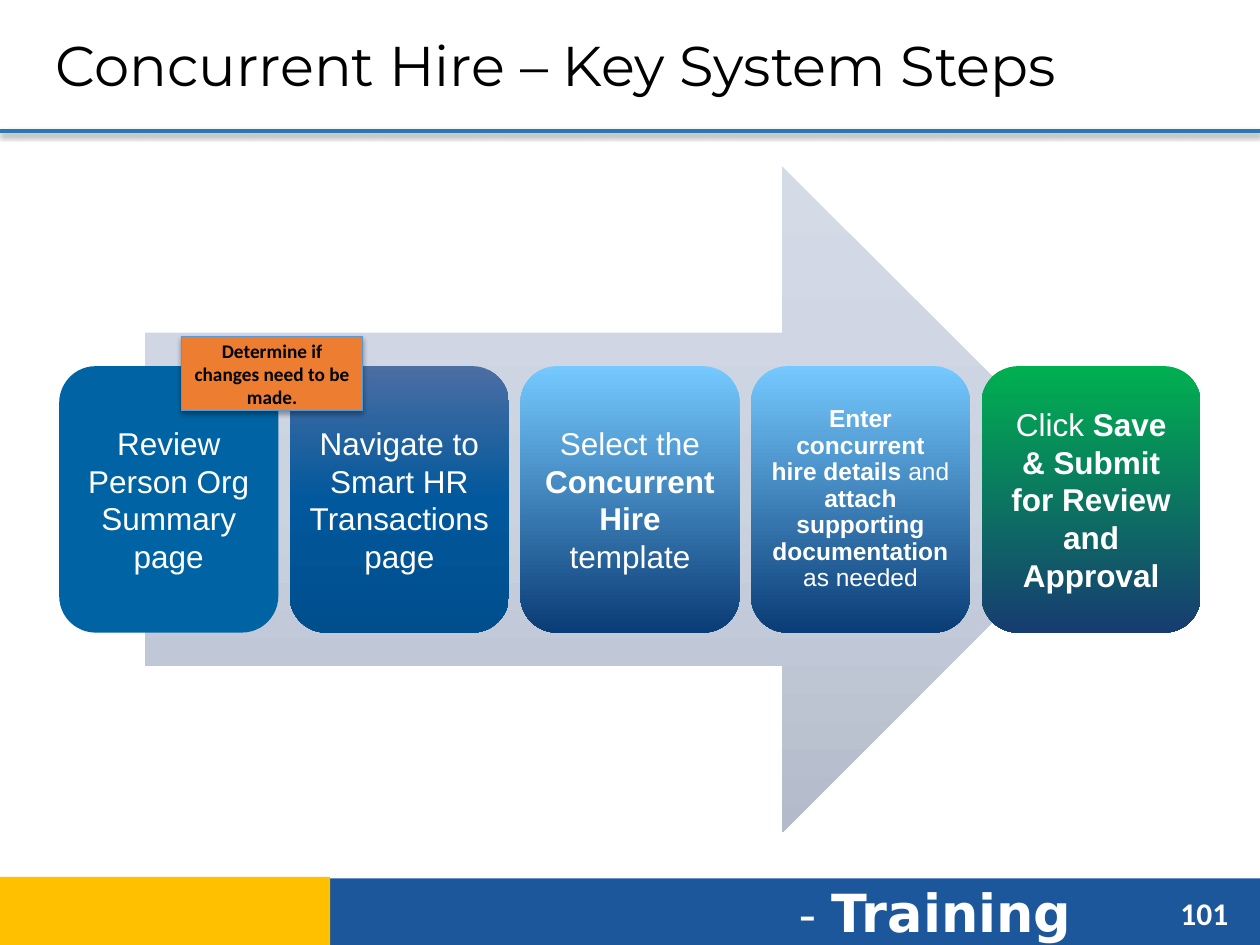
from pptx import Presentation
from pptx.dml.color import RGBColor
from pptx.enum.shapes import MSO_CONNECTOR, MSO_SHAPE
from pptx.enum.text import MSO_ANCHOR, PP_ALIGN
from pptx.oxml import parse_xml
from pptx.oxml.ns import nsdecls
from pptx.util import Inches, Pt

RECT, ROUNDED, ARROW = MSO_SHAPE.RECTANGLE, MSO_SHAPE.ROUNDED_RECTANGLE, MSO_SHAPE.RIGHT_ARROW
STRAIGHT = MSO_CONNECTOR.STRAIGHT
MIDDLE, TOP = MSO_ANCHOR.MIDDLE, MSO_ANCHOR.TOP
CENTER, LEFT = PP_ALIGN.CENTER, PP_ALIGN.LEFT

COLORS = {
    "white": "FFFFFF", "black": "000000", "rule": "2E75B6",
    "footer": "1D579B", "gold": "FFC000",
    "note": "ED7D31", "note_edge": "5698D3",
}
# Gradients run top to bottom as (percent, colour) stops
ARROW_FILL = [(0, "D4DAE6"), (50, "CBD3E1"), (100, "B3BBCA")]
SKY_FILL = [(0, "75C9FF"), (100, "0A3C75")]

# Each step: fill, font size, line spacing, runs of (text, bold)
STEPS = [
    ("0064A4", 18, 1, [("Review Person Org Summary page", False)]),
    ([(0, "4B6EA3"), (50, "01589C"), (100, "004E8C")], 18, 1,
     [("Navigate to Smart HR Transactions page", False)]),
    (SKY_FILL, 18, 1,
     [("Select the ", False), ("Concurrent Hire ", True), ("template", False)]),
    (SKY_FILL, 14, 0.9,
     [("Enter concurrent hire details ", True), ("and", False),
      (" attach supporting documentation ", True), ("as needed", False)]),
    ([(0, "00B050"), (100, "173C71")], 18, 1,
     [("Click ", False), ("Save & Submit for Review and Approval", True)]),
]


def share(box, x, y, w, h):
    """Return the part of box given by shares of its width and height."""
    left, top, width, height = box
    return (int(left + x * width), int(top + y * height),
            int(w * width), int(h * height))


def paint(shape, fill):
    if isinstance(fill, str):
        shape.fill.solid()
        shape.fill.fore_color.rgb = RGBColor.from_string(fill)
        return
    shape.fill.gradient()
    shape.fill.gradient_angle = 270
    stops = "".join(
        f'<a:gs pos="{percent * 1000}"><a:srgbClr val="{color}"/></a:gs>'
        for percent, color in fill)
    old_stops = shape._element.spPr.find(".//{*}gsLst")
    old_stops.getparent().replace(
        old_stops, parse_xml(f'<a:gsLst {nsdecls("a")}>{stops}</a:gsLst>'))


def add_block(slide, kind, box, fill):
    block = slide.shapes.add_shape(kind, *box)
    block.shadow.inherit = False
    block.line.fill.background()
    paint(block, fill)
    return block


def drop_shadow(part, alpha, distance):
    """Cast a soft black shadow straight down."""
    for old in part._element.spPr.findall("{*}effectLst"):
        part._element.spPr.remove(old)
    part._element.spPr.append(parse_xml(
        f'<a:effectLst {nsdecls("a")}>'
        f'<a:outerShdw blurRad="{Pt(3.1)}" dist="{Pt(distance)}" dir="5400000" rotWithShape="0">'
        f'<a:srgbClr val="{COLORS["black"]}"><a:alpha val="{alpha * 1000}"/></a:srgbClr>'
        '</a:outerShdw></a:effectLst>'))


def write(holder, runs, font, size, color="white", bold=None, align=LEFT,
          anchor=TOP, inset=None, spacing=None):
    frame = holder.text_frame
    frame.word_wrap = True
    frame.vertical_anchor = anchor
    if inset is not None:
        frame.margin_left = frame.margin_right = Inches(inset)
        frame.margin_top = frame.margin_bottom = Inches(inset)
    paragraph = frame.paragraphs[0]
    paragraph.alignment = align
    if spacing:
        paragraph.line_spacing = spacing
    paragraph.font.name = font
    paragraph.font.size = Pt(size)
    paragraph.font.bold = bold
    paragraph.font.color.rgb = RGBColor.from_string(COLORS[color])
    for text, run_bold in runs:
        run = paragraph.add_run()
        run.text = text
        if run_bold is not None:
            run.font.bold = run_bold
    return paragraph


def add_header(slide, box):
    title = slide.shapes.add_textbox(*share(box, 0.034, 0.04, 0.916, 0.89))
    write(title, [("Concurrent Hire – Key System Steps", None)],
          "Montserrat", 32, "black", anchor=MIDDLE)
    # Rule along the bottom edge
    left, top, width, height = box
    rule = slide.shapes.add_connector(
        STRAIGHT, left, top + height, left + width, top + height)
    rule.line.color.rgb = RGBColor.from_string(COLORS["rule"])
    rule.line.width = Pt(2.25)
    drop_shadow(rule, 38, 1.6)


def add_footer(slide, box):
    add_block(slide, RECT, share(box, 0.261, 0.02, 0.739, 1), COLORS["footer"])
    add_block(slide, RECT, share(box, 0, 0, 0.262, 1), COLORS["gold"])
    course = slide.shapes.add_textbox(*share(box, 0.624, -0.04, 0.28, 1.11))
    label = write(course, [("- ", False), ("Training", True)], "DejaVu Sans", 30)
    label.runs[0].font.size = Pt(28)
    page = slide.shapes.add_textbox(*share(box, 0.927, 0.15, 0.06, 0.73))
    write(page, [("101", None)], "Calibri", 18, bold=True)


def add_process(slide, box):
    add_block(slide, ARROW, share(box, 0.075, 0, 0.85, 1), ARROW_FILL)
    # Equal steps across the middle of the arrow
    gap = 0.01
    step_width = (1 - gap * (len(STEPS) - 1)) / len(STEPS)
    for column, (fill, size, spacing, runs) in enumerate(STEPS):
        step = add_block(
            slide, ROUNDED,
            share(box, column * (step_width + gap), 0.3, step_width, 0.4), fill)
        write(step, runs, "Arial", size, align=CENTER, anchor=MIDDLE,
              inset=0.07, spacing=spacing)
    # Note over the first two steps
    note = add_block(slide, RECT, share(box, 0.107, 0.255, 0.159, 0.112), COLORS["note"])
    note.line.color.rgb = RGBColor.from_string(COLORS["note_edge"])
    note.line.width = Pt(0.75)
    drop_shadow(note, 35, 1.8)
    write(note, [("Determine if changes need to be made.", None)],
          "Calibri", 11, "black", bold=True, align=CENTER, anchor=MIDDLE)


def main():
    deck = Presentation()
    deck.slide_width, deck.slide_height = Inches(10), Inches(7.5)
    slide = deck.slides.add_slide(deck.slide_layouts[6])
    page = (0, 0, deck.slide_width, deck.slide_height)
    add_footer(slide, share(page, 0, 0.928, 1, 0.073))
    add_header(slide, share(page, 0, 0, 1, 0.139))
    add_process(slide, share(page, 0.047, 0.176, 0.906, 0.705))
    deck.save("out.pptx")


if __name__ == "__main__":
    main()
